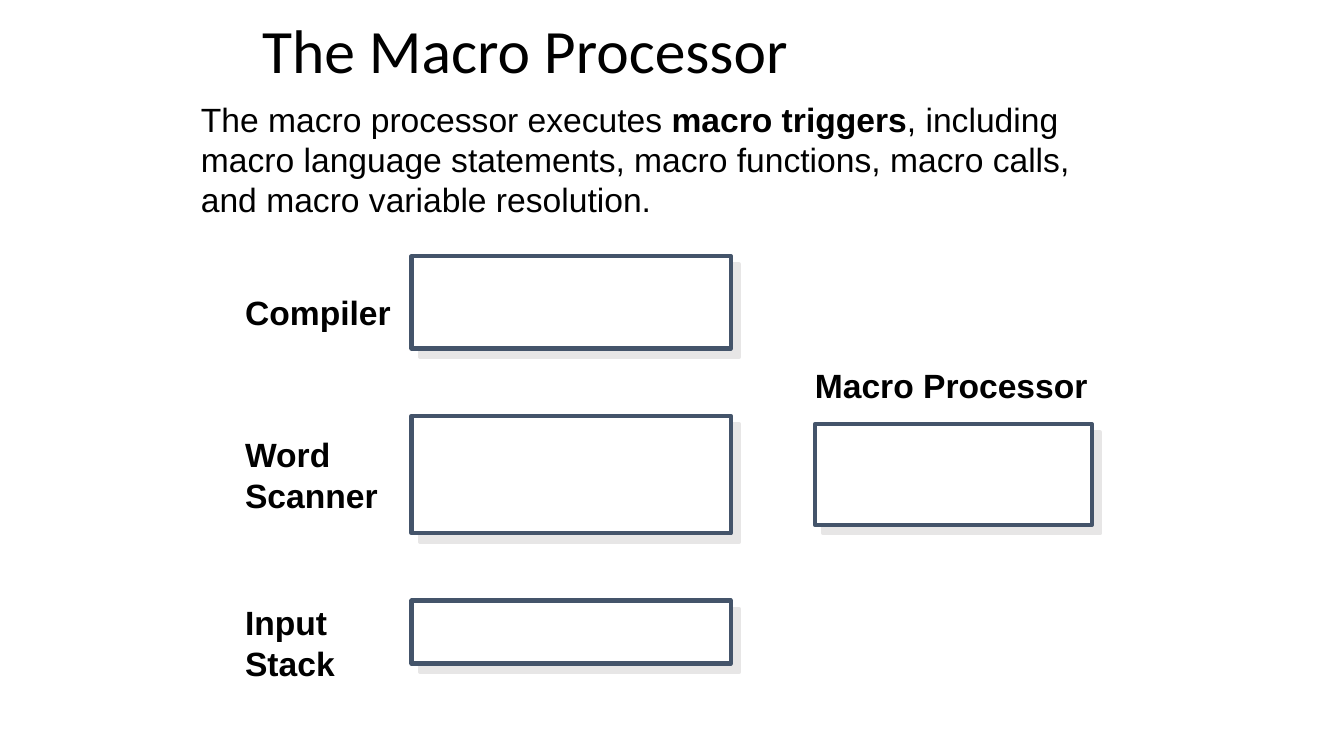
from lxml.etree import SubElement
from pptx import Presentation
from pptx.dml.color import RGBColor
from pptx.enum.shapes import MSO_SHAPE as Shape
from pptx.enum.text import MSO_ANCHOR as Anchor, MSO_AUTO_SIZE as Fit, PP_ALIGN as Align
from pptx.oxml.ns import qn
from pptx.util import Inches, Pt

HEADING = ("The Macro Processor", (30, -0.25, 102, 13.3))
SUMMARY = (
    [
        [("The macro processor executes ", False), ("macro triggers", True), (", including ", False)],
        [("macro language statements, macro functions, macro calls, ", False)],
        [("and macro variable resolution.", False)],
    ],
    (23.2, 11, 107, 15.8),
)
STAGES = [
    ("Input\nStack", (28, 70.5, 15, 10.9), 0.1, (49, 71.5, 38, 7.5)),
    ("Word\nScanner", (28, 50.5, 20, 10.9), 0.1, (49, 49.5, 38, 14)),
    ("Compiler", (28, 33.5, 20, 6), 0.1, (49, 30.5, 38, 11)),
    ("Macro Processor", (97, 43.5, 33, 4.8), 0, (97, 50.5, 33, 12)),
]

COLUMNS, ROWS = 160, 90
THEME = {
    "ink": RGBColor.from_string("000000"),
    "paper": RGBColor.from_string("FFFFFF"),
    "border": RGBColor.from_string("44546A"),
    "shade": "E7E6E6",
    "border_width": Pt(3),
    "shade_distance": Pt(8.5),
    "heading": {"name": "Calibri", "size": Pt(44)},
    "text": {"name": "Arial", "size": Pt(24), "bold": False},
    "label": {"name": "Arial", "size": Pt(24), "bold": True},
}

deck = Presentation()
deck.slide_width, deck.slide_height = Inches(13.33), Inches(7.5)
slide = deck.slides.add_slide(deck.slide_layouts[1])


def apply(target, values):
    for attribute, value in values.items():
        setattr(target, attribute, value)


def place(cells):
    left, top, width, height = cells
    column, row = deck.slide_width / COLUMNS, deck.slide_height / ROWS
    return {
        "left": round(left * column), "top": round(top * row),
        "width": round(width * column), "height": round(height * row),
    }


def set_frame(frame, inset, anchor=Anchor.TOP):
    margins = ("margin_left", "margin_top", "margin_right", "margin_bottom")
    apply(frame, dict.fromkeys(margins, Inches(inset)))
    apply(frame, {"word_wrap": True, "auto_size": Fit.NONE, "vertical_anchor": anchor})


def set_font(font, style):
    apply(font, THEME[style])
    font.color.rgb = THEME["ink"]


def add_heading(text, cells):
    heading = slide.shapes.title
    apply(heading, place(cells))
    set_frame(heading.text_frame, 0.1, Anchor.MIDDLE)
    line = heading.text_frame.paragraphs[0]
    line.text = text
    apply(line, {"alignment": Align.LEFT, "line_spacing": 0.9})
    set_font(line.runs[0].font, "heading")


def add_summary(lines, cells):
    summary = slide.placeholders[1]
    apply(summary, place(cells))
    set_frame(summary.text_frame, 0.06)
    paragraph = summary.text_frame.paragraphs[0]
    properties = paragraph._p.get_or_add_pPr()
    for key in ("marL", "indent"):
        properties.set(key, "0")
    SubElement(properties, qn("a:buNone"))
    for index, line in enumerate(lines):
        if index:
            paragraph.add_line_break()
        for text, strong in line:
            run = paragraph.add_run()
            run.text = text
            set_font(run.font, "label" if strong else "text")


def add_label(text, cells, inset):
    label = slide.shapes.add_textbox(**place(cells))
    set_frame(label.text_frame, inset)
    paragraph = label.text_frame.paragraphs[0]
    paragraph.text = text
    for run in paragraph.runs:
        set_font(run.font, "label")


def add_stage(cells):
    stage = slide.shapes.add_shape(Shape.RECTANGLE, **place(cells))
    stage.fill.solid()
    stage.fill.fore_color.rgb = THEME["paper"]
    stage.line.color.rgb = THEME["border"]
    stage.line.width = THEME["border_width"]
    stage.shadow.inherit = False
    effects = stage._element.spPr.find(qn("a:effectLst"))
    shade = SubElement(
        effects, qn("a:outerShdw"), dist=str(THEME["shade_distance"]),
        dir=str(45 * 60000), algn="ctr", rotWithShape="0",
    )
    SubElement(shade, qn("a:srgbClr"), val=THEME["shade"])


add_heading(*HEADING)
add_summary(*SUMMARY)
for text, label_cells, inset, stage_cells in STAGES:
    add_label(text, label_cells, inset)
    add_stage(stage_cells)

deck.save("out.pptx")
